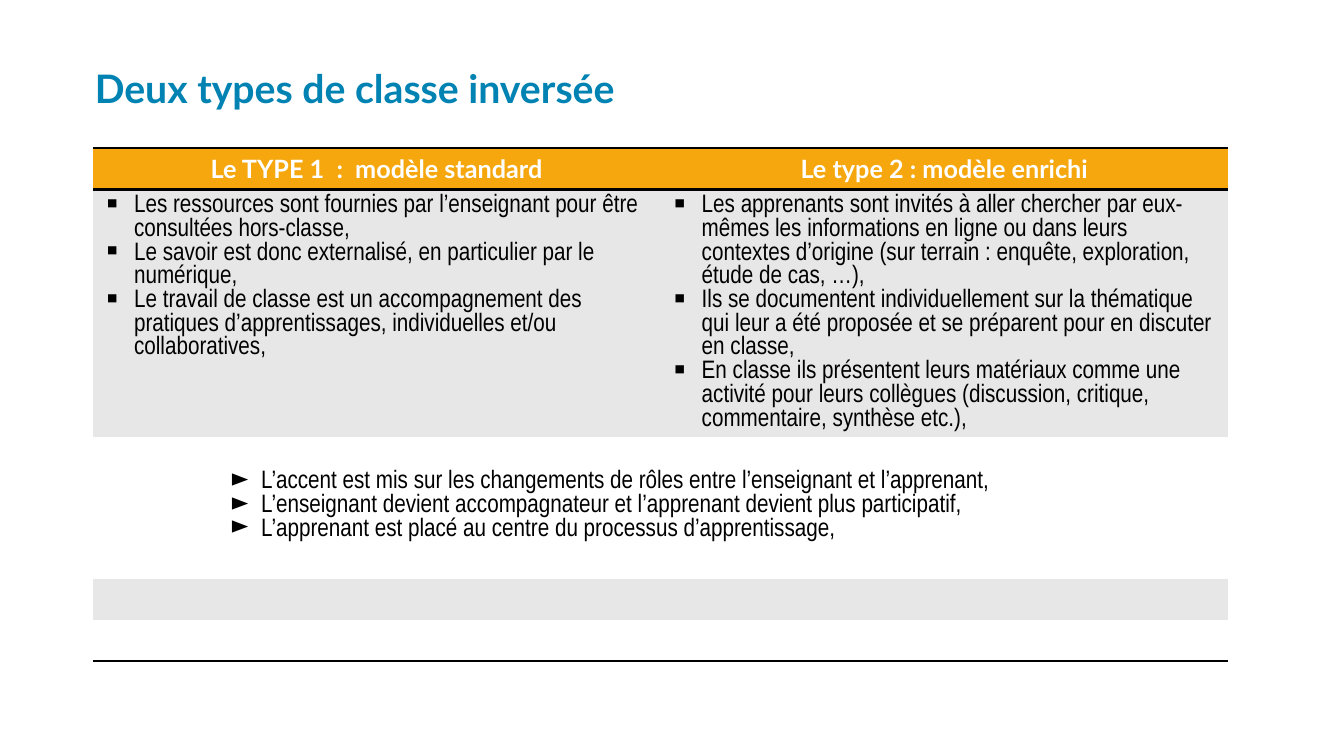
from pptx import Presentation
from pptx.dml.color import RGBColor as RGB
from pptx.enum.text import MSO_ANCHOR as Anchor, MSO_AUTO_SIZE as Fit, PP_ALIGN as Align
from pptx.oxml.ns import qn
from pptx.util import Inches, Pt
from lxml.etree import SubElement as Sub

BLUE = RGB(0x00, 0x83, 0xB3)
GOLD = RGB(0xF5, 0xA7, 0x0D)
GREY = RGB(0xE7, 0xE7, 0xE7)
WHITE = RGB(0xFF, 0xFF, 0xFF)
BLACK = RGB(0x00, 0x00, 0x00)

TITLE = {"name": "Lato", "size": Pt(28), "bold": True}
HEAD = {"name": "Lato", "size": Pt(18), "bold": True}
BODY = {"name": "Arial Narrow", "size": Pt(18), "bold": False}

HEADS = ["Le TYPE 1  :  modèle standard", "Le type 2 : modèle enrichi"]
TYPES = [
    ["Les ressources sont fournies par l’enseignant pour être consultées hors-classe,",
     "Le savoir est donc externalisé, en particulier par le numérique,",
     "Le travail de classe est un accompagnement des pratiques d’apprentissages, "
     "individuelles et/ou collaboratives,"],
    ["Les apprenants sont invités à aller chercher par eux-mêmes les informations en ligne "
     "ou dans leurs contextes d’origine (sur terrain : enquête, exploration, étude de cas, …),",
     "Ils se documentent individuellement sur la thématique qui leur a été proposée "
     "et se préparent pour en discuter en classe,",
     "En classe ils présentent leurs matériaux comme une activité pour leurs collègues "
     "(discussion, critique, commentaire, synthèse etc.),"],
]
COMMON = [
    "L’accent est mis sur les changements de rôles entre l’enseignant et l’apprenant,",
    "L’enseignant devient accompagnateur et l’apprenant devient plus participatif,",
    "L’apprenant est placé au centre du processus d’apprentissage,",
]
HEIGHTS = [0.41, 2.46, 1.4, 0.41, 0.41]
FILLS = [GOLD, GREY, WHITE, GREY, WHITE]
RULES = {0, 1, len(HEIGHTS)}  # row edges that carry a black line


class Page:
    def __init__(self, deck):
        self.slide = deck.slides.add_slide(deck.slide_layouts[5])

    def style(self, para, look, color):
        for key, value in look.items():
            setattr(para.font, key, value)
        para.font.color.rgb = color

    def title(self, text, box):
        shape = self.slide.shapes.title
        shape.left, shape.top, shape.width, shape.height = map(Inches, box)
        frame = shape.text_frame
        frame.text = text
        frame.auto_size = Fit.NONE
        frame.vertical_anchor = Anchor.BOTTOM
        para = frame.paragraphs[0]
        para.alignment = Align.LEFT
        para.line_spacing = 0.8
        self.style(para, TITLE, BLUE)

    def table(self, box, heights, fills, rules):
        rows, cols = len(heights), 2
        shape = self.slide.shapes.add_table(rows, cols, *map(Inches, box))
        grid = shape.table
        grid.first_row = grid.horz_banding = False
        for i, high in enumerate(heights):
            grid.rows[i].height = Inches(high)
            for cell in grid.rows[i].cells:
                self.edges(cell, i in rules, i + 1 in rules)
                cell.fill.solid()
                cell.fill.fore_color.rgb = fills[i]
        return grid

    def edges(self, cell, top, bottom):
        """Draw the black rules of a cell and clear its other sides."""
        props = cell._tc.get_or_add_tcPr()
        for side, drawn in zip("LRTB", (False, False, top, bottom)):
            line = Sub(props, qn(f"a:ln{side}"), w=str(Pt(2)))
            if drawn:
                fill = Sub(line, qn("a:solidFill"))
                Sub(fill, qn("a:srgbClr"), val=str(BLACK))
            else:
                Sub(line, qn("a:noFill"))

    def head(self, cell, text):
        cell.text = text
        para = cell.text_frame.paragraphs[0]
        para.alignment = Align.CENTER
        self.style(para, HEAD, WHITE)

    def bullets(self, cell, lines, mark, indent):
        cell.text = "\n".join(lines)
        for para in cell.text_frame.paragraphs:
            props = para._p.get_or_add_pPr()
            props.set("marL", str(Inches(indent)))
            props.set("indent", str(Inches(-0.31)))
            Sub(props, qn("a:buChar"), char=mark)
            self.style(para, BODY, BLACK)


def main():
    deck = Presentation()
    deck.slide_width, deck.slide_height = Inches(13.33), Inches(7.5)
    page = Page(deck)
    page.title("Deux types de classe inversée", (0.84, 0.58, 11.58, 0.57))
    grid = page.table((0.92, 1.47, 11.26, sum(HEIGHTS)), HEIGHTS, FILLS, RULES)
    for col, (head, lines) in enumerate(zip(HEADS, TYPES)):
        page.head(grid.cell(0, col), head)
        page.bullets(grid.cell(1, col), lines, "▪", 0.31)
    wide = grid.cell(2, 0)
    wide.merge(grid.cell(2, 1))
    wide.margin_top = Inches(0.33)
    page.bullets(wide, COMMON, "►", 1.57)
    deck.save("out.pptx")


if __name__ == "__main__":
    main()
